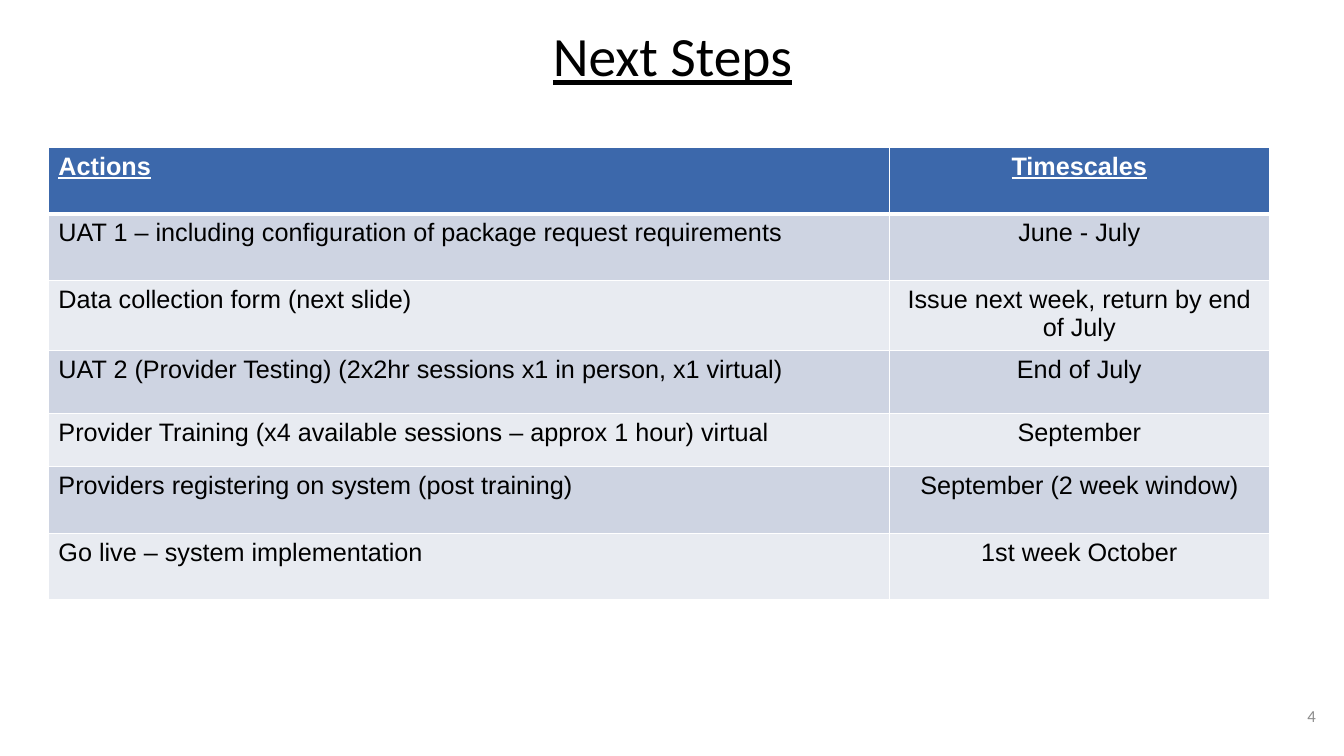
from dataclasses import dataclass

from lxml import etree
from pptx import Presentation
from pptx.dml.color import RGBColor
from pptx.enum.text import MSO_ANCHOR, MSO_AUTO_SIZE, PP_ALIGN
from pptx.oxml.ns import qn
from pptx.slide import Slide
from pptx.table import _Cell
from pptx.text.text import TextFrame
from pptx.util import Inches, Pt

LEFT, CENTER, RIGHT = PP_ALIGN.LEFT, PP_ALIGN.CENTER, PP_ALIGN.RIGHT
TOP, MIDDLE = MSO_ANCHOR.TOP, MSO_ANCHOR.MIDDLE
NO_AUTOFIT = MSO_AUTO_SIZE.NONE

WHITE, BLACK, GREY = "FFFFFF", "000000", "8C8C8C"
HEADER_FILL = "3C68AB"
BAND_FILLS = ("CED4E2", "E8EBF1")
COLUMN_WIDTHS = (8.34, 3.77)
COLUMN_ALIGNMENTS = (LEFT, CENTER)


@dataclass(frozen=True)
class Step:
    action: str
    timescale: str
    height: float = 0.66


STEPS = (
    Step("Actions", "Timescales"),
    Step("UAT 1 – including configuration of package request requirements", "June - July"),
    Step("Data collection form (next slide)", "Issue next week, return by end of July"),
    Step("UAT 2 (Provider Testing) (2x2hr sessions x1 in person, x1 virtual)", "End of July", 0.62),
    Step("Provider Training (x4 available sessions – approx 1 hour) virtual", "September", 0.53),
    Step("Providers registering on system (post training)", "September (2 week window)"),
    Step("Go live – system implementation", "1st week October"),
)


def color(value: str) -> RGBColor:
    return RGBColor.from_string(value)


def write_text(frame: TextFrame, text: str, *, size: float, font: str = "Calibri",
               fill: str = BLACK, align: PP_ALIGN = LEFT, anchor: MSO_ANCHOR = MIDDLE,
               bold: bool = False, underline: bool = False, spacing: float = 1.0) -> None:
    frame.word_wrap = True
    frame.vertical_anchor = anchor
    paragraph = frame.paragraphs[0]
    paragraph.alignment = align
    paragraph.line_spacing = spacing
    run = paragraph.add_run()
    run.text = text
    run.font.name = font
    run.font.size = Pt(size)
    run.font.bold = bold
    run.font.underline = underline
    run.font.color.rgb = color(fill)


def style_cell(cell: _Cell, fill: str, top_width: float, bottom_width: float) -> None:
    properties = cell._tc.get_or_add_tcPr()
    widths = {"a:lnL": 1, "a:lnR": 1, "a:lnT": top_width, "a:lnB": bottom_width}
    for tag, width in widths.items():
        line = etree.SubElement(properties, qn(tag), w=str(Pt(width)))
        solid = etree.SubElement(line, qn("a:solidFill"))
        etree.SubElement(solid, qn("a:srgbClr"), val=WHITE)
    cell.fill.solid()
    cell.fill.fore_color.rgb = color(fill)


def add_title(slide: Slide) -> None:
    title = slide.shapes.title
    title.left, title.top = Inches(0.92), Inches(0.3)
    title.width, title.height = Inches(11.5), Inches(0.57)
    title.text_frame.auto_size = NO_AUTOFIT
    write_text(title.text_frame, "Next Steps", size=39.6, align=CENTER,
               underline=True, spacing=0.9)


def add_steps_table(slide: Slide) -> None:
    table = slide.shapes.add_table(
        len(STEPS), len(COLUMN_WIDTHS), Inches(0.48), Inches(1.46),
        Inches(sum(COLUMN_WIDTHS)), Inches(sum(step.height for step in STEPS))).table
    for column, width in zip(table.columns, COLUMN_WIDTHS):
        column.width = Inches(width)
    for index, step in enumerate(STEPS):
        is_header = index == 0
        table.rows[index].height = Inches(step.height)
        fill = HEADER_FILL if is_header else BAND_FILLS[(index - 1) % 2]
        for position, text in enumerate((step.action, step.timescale)):
            cell = table.cell(index, position)
            style_cell(cell, fill, 3 if index == 1 else 1, 3 if is_header else 1)
            write_text(cell.text_frame, text, size=18, font="Arial",
                       fill=WHITE if is_header else BLACK,
                       align=COLUMN_ALIGNMENTS[position], anchor=TOP,
                       bold=is_header, underline=is_header)


def add_slide_number(slide: Slide) -> None:
    box = slide.shapes.add_textbox(Inches(10.15), Inches(6.9), Inches(3), Inches(0.4))
    write_text(box.text_frame, "4", size=12, fill=GREY, align=RIGHT)


def main() -> None:
    presentation = Presentation()
    presentation.slide_width = Inches(13.33)
    presentation.slide_height = Inches(7.5)
    slide = presentation.slides.add_slide(presentation.slide_layouts[5])
    add_slide_number(slide)
    add_steps_table(slide)
    add_title(slide)
    presentation.save("out.pptx")


if __name__ == "__main__":
    main()
